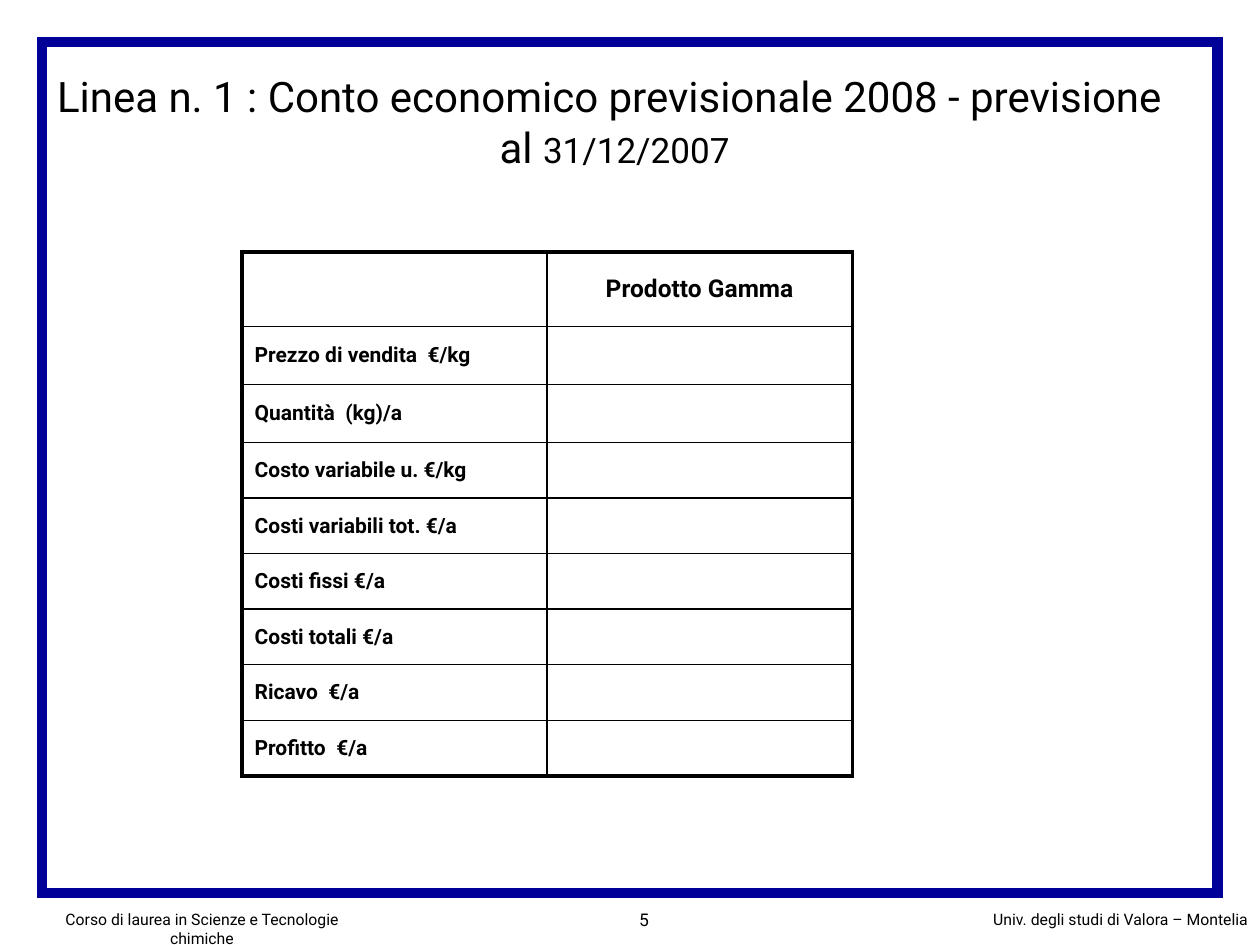
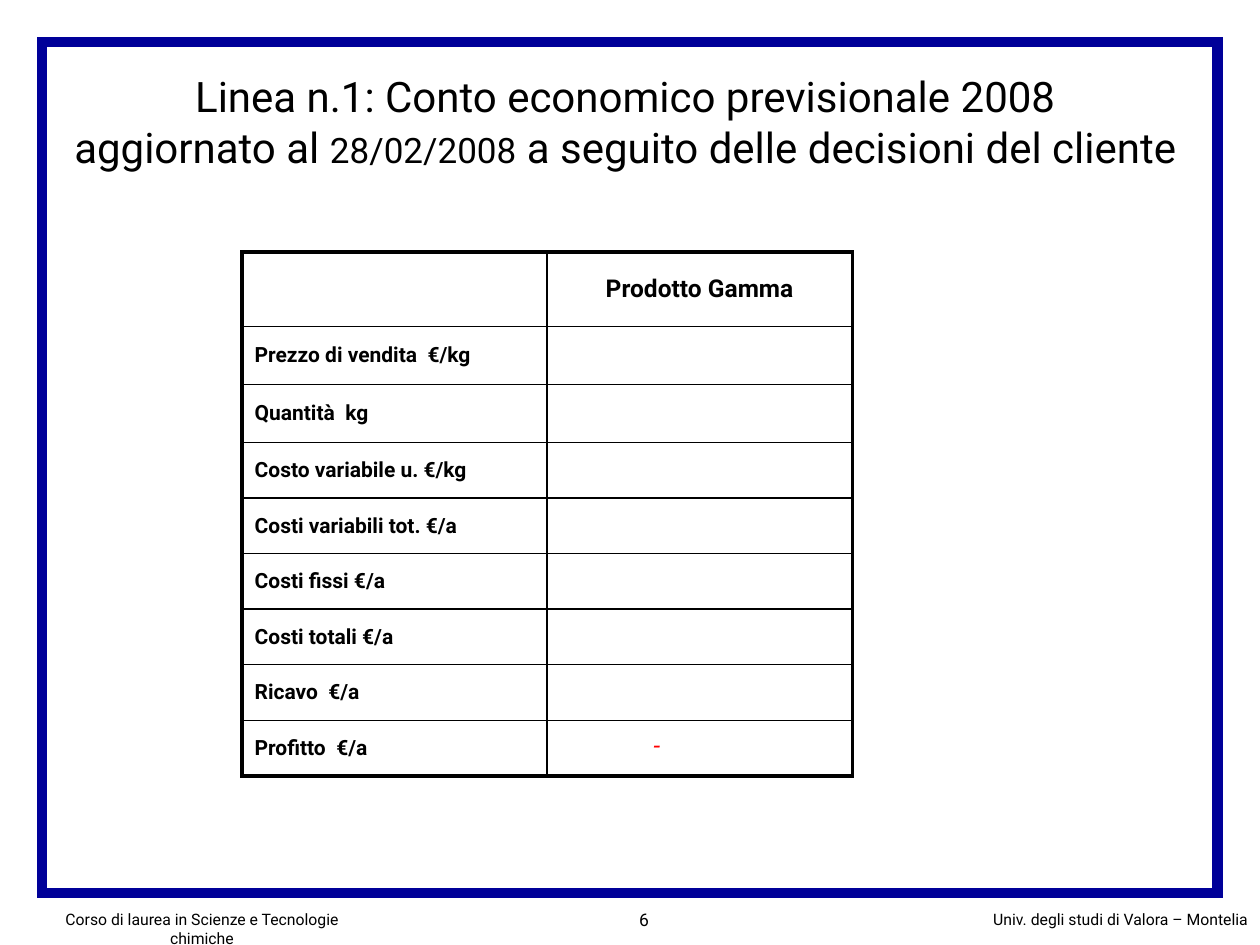
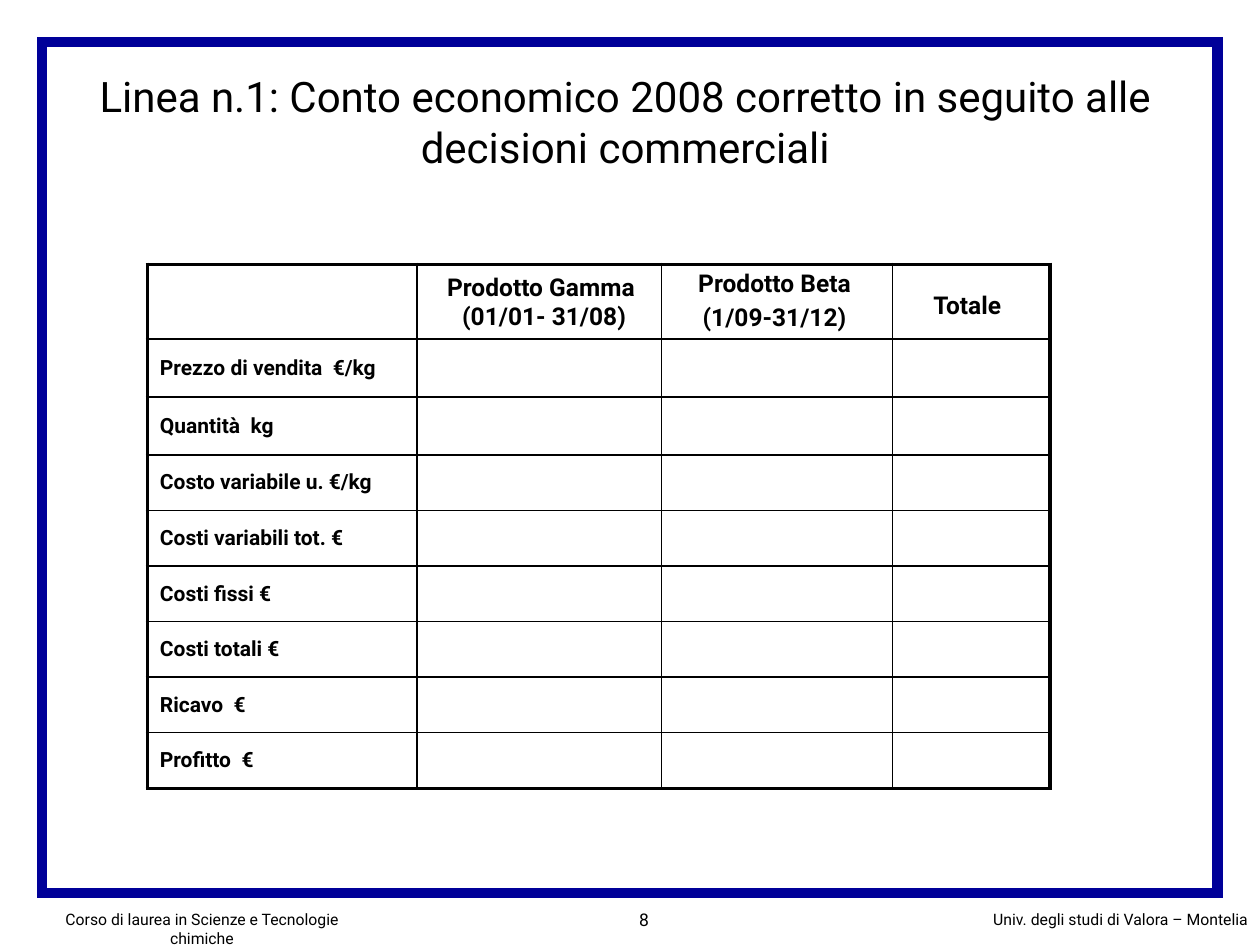
import pptx
import pptx.dml.color
import pptx.enum.shapes
import pptx.enum.text
import pptx.oxml
import pptx.oxml.ns
import pptx.util
from pptx.util import Cm, Pt

# Shared look
NAVY = pptx.dml.color.RGBColor(0x00, 0x00, 0x99)
BLACK = pptx.dml.color.RGBColor(0x00, 0x00, 0x00)
RED = pptx.dml.color.RGBColor(0xFF, 0x00, 0x00)
FONT = "Roboto"
LEFT = pptx.enum.text.PP_ALIGN.LEFT
CENTER = pptx.enum.text.PP_ALIGN.CENTER
RIGHT = pptx.enum.text.PP_ALIGN.RIGHT
MIDDLE = pptx.enum.text.MSO_ANCHOR.MIDDLE

TITLE_SIZE, DATE_SIZE, HEADER_SIZE, LABEL_SIZE = 24, 20, 14, 12
OUTER_LINE, INNER_LINE = Pt(2.25), Pt(1)
ROW_HEIGHTS = [1.5] + [1.17] * 2 + [1.12] * 6
FOOTER_TOP = 18.21


def style(paragraph, size, align, bold=False, italic=False, color=BLACK):
    paragraph.alignment = align
    font = paragraph.font
    font.name, font.size = FONT, Pt(size)
    font.bold, font.italic = bold, italic
    font.color.rgb = color


def add_label(slide, box, lines, size, align, space_before=0, **look):
    label = slide.shapes.add_textbox(*map(Cm, box))
    frame = label.text_frame
    frame.word_wrap = True
    frame.text = "\n".join(lines)
    for paragraph in frame.paragraphs:
        style(paragraph, size, align, **look)
        paragraph.space_before = Pt(space_before)
    return label


def add_shared_parts(layout, slide):
    """Draw the border and footers, then hand them to the layout."""
    border = slide.shapes.add_shape(
        pptx.enum.shapes.MSO_SHAPE.RECTANGLE, Cm(0.85), Cm(0.85), Cm(23.7), Cm(17.15))
    border.fill.background()
    border.line.color.rgb = NAVY
    border.line.width = Pt(6)
    border.shadow.inherit = False
    # Square corners
    border.element.spPr.find(pptx.oxml.ns.qn("a:ln")).append(pptx.oxml.parse_xml(
        f'<a:miter {pptx.oxml.ns.nsdecls("a")} lim="800000"/>'))
    course = add_label(slide, (0.41, FOOTER_TOP, 7.32, 0.64),
                       ["Corso di laurea in Scienze e Tecnologie chimiche"], 9, CENTER)
    university = add_label(slide, (18.42, FOOTER_TOP, 6.98, 0.64),
                           ["Univ. degli studi di Valora – Montelia"], 9, RIGHT)
    for number, part in enumerate((border, course, university), start=101):
        part.element.nvSpPr.cNvPr.set("id", str(number))
        layout.shapes.element.append(part.element)


def set_title(slide, left, width, pieces):
    """Fill the title; each piece is a text and its size."""
    title = slide.shapes.title
    title.left, title.top, title.width, title.height = map(Cm, (left, 1.27, width, 2.34))
    frame = title.text_frame
    frame.word_wrap = True
    frame.auto_size = pptx.enum.text.MSO_AUTO_SIZE.NONE
    frame.vertical_anchor = MIDDLE
    paragraph = frame.paragraphs[0]
    style(paragraph, TITLE_SIZE, CENTER)
    for text, size in pieces:
        for index, line in enumerate(text.split("\n")):
            if index:
                paragraph.add_line_break()
            run = paragraph.add_run()
            run.text = line
            run.font.size = Pt(size)


def set_borders(cell, widths):
    """Widths run left, right, top, bottom; lines precede the cell's fill."""
    properties = cell._tc.get_or_add_tcPr()
    for position, (tag, width) in enumerate(zip(("lnL", "lnR", "lnT", "lnB"), widths)):
        properties.insert(position, pptx.oxml.parse_xml(
            f'<a:{tag} {pptx.oxml.ns.nsdecls("a")} w="{int(width)}">'
            f'<a:solidFill><a:srgbClr val="{BLACK}"/></a:solidFill></a:{tag}>'))


def add_account_table(slide, left, top, widths, headers, labels):
    rows, columns = len(ROW_HEIGHTS), len(widths)
    table = slide.shapes.add_table(rows, columns, Cm(left), Cm(top),
                                   Cm(sum(widths)), Cm(sum(ROW_HEIGHTS))).table
    table.first_row = table.horz_banding = False
    for column, width in zip(table.columns, widths):
        column.width = Cm(width)
    for row, height in zip(table.rows, ROW_HEIGHTS):
        row.height = Cm(height)

    # Texts: headers across the top, labels down the first column
    texts = {(0, c): (text, HEADER_SIZE, CENTER) for c, text in enumerate(headers, 1)}
    texts |= {(r, 0): (text, LABEL_SIZE, LEFT) for r, text in enumerate(labels, 1)}
    for r in range(rows):
        for c in range(columns):
            cell = table.cell(r, c)
            cell.fill.background()
            cell.vertical_anchor = MIDDLE
            edges = (c == 0, c == columns - 1, r == 0, r == rows - 1)
            set_borders(cell, [OUTER_LINE if edge else INNER_LINE for edge in edges])
            if (r, c) in texts:
                text, size, align = texts[r, c]
                cell.text = text
                style(cell.text_frame.paragraphs[0], size, align, bold=True)


def account_labels(quantity_unit, period):
    return ["Prezzo di vendita  €/kg", f"Quantità  {quantity_unit}",
            "Costo variabile u. €/kg", f"Costi variabili tot. €{period}",
            f"Costi fissi €{period}", f"Costi totali €{period}",
            f"Ricavo  €{period}", f"Profitto  €{period}"]


def add_page(slide, number):
    add_label(slide, (8.05, FOOTER_TOP, 5.28, 1.27), [str(number)], 10, RIGHT)


def build_single_product(slide, quantity_unit, left=4.88, top=5.08, loss=False):
    add_account_table(slide, left, top, [6.15, 6.15], ["Prodotto Gamma"],
                      account_labels(quantity_unit, "/a"))
    if loss:
        add_label(slide, (left + 8.02, top + 9.52, 0.69, 0.86), ["-"],
                  HEADER_SIZE, CENTER, italic=True, color=RED)


def build_two_products(slide, left=2.97, top=5.33):
    add_account_table(slide, left, top, [5.44, 4.93, 4.65, 3.18], [],
                      account_labels("kg", ""))
    # Column headings laid over the top row: offset, size, lines, spacing
    headings = [
        (5.56, 0.03, 4.88, 1.45, ["Prodotto Gamma ", "(01/01- 31/08)"], 0),
        (10.59, -0.05, 4.11, 1.55, ["Prodotto Beta", "(1/09-31/12)"], 2.8),
        (15.5, 0.39, 2.06, 0.84, ["Totale"], 0),
    ]
    for dx, dy, width, height, lines, spacing in headings:
        add_label(slide, (left + dx, top + dy, width, height), lines,
                  HEADER_SIZE, CENTER, spacing, bold=True)


def main():
    deck = pptx.Presentation()
    deck.slide_width, deck.slide_height = Cm(25.4), Cm(19.05)
    layout = deck.slide_layouts[5]
    forecast, update, correction = [deck.slides.add_slide(layout) for _ in range(3)]
    add_shared_parts(layout, forecast)
    for slide, number in ((forecast, 5), (update, 6), (correction, 8)):
        add_page(slide, number)

    # Forecast at the end of 2007
    build_single_product(forecast, "(kg)/a")
    set_title(forecast, 0.64, 23.5, [
        ("Linea n. 1 : Conto economico previsionale 2008 - previsione \nal ", TITLE_SIZE),
        ("31/12/2007", DATE_SIZE)])

    # Update after the customer's decisions
    build_single_product(update, "kg", loss=True)
    set_title(update, 0.43, 24.56, [
        ("Linea n.1: Conto economico previsionale 2008 \naggiornato al ", TITLE_SIZE),
        ("28/02/2008", DATE_SIZE),
        (" a seguito delle decisioni del cliente ", TITLE_SIZE)])

    # Correction with both products
    build_two_products(correction)
    set_title(correction, 0.64, 23.93, [
        ("Linea n.1: Conto economico 2008 corretto in seguito alle decisioni commerciali",
         TITLE_SIZE)])

    deck.save("out.pptx")


if __name__ == "__main__":
    main()
